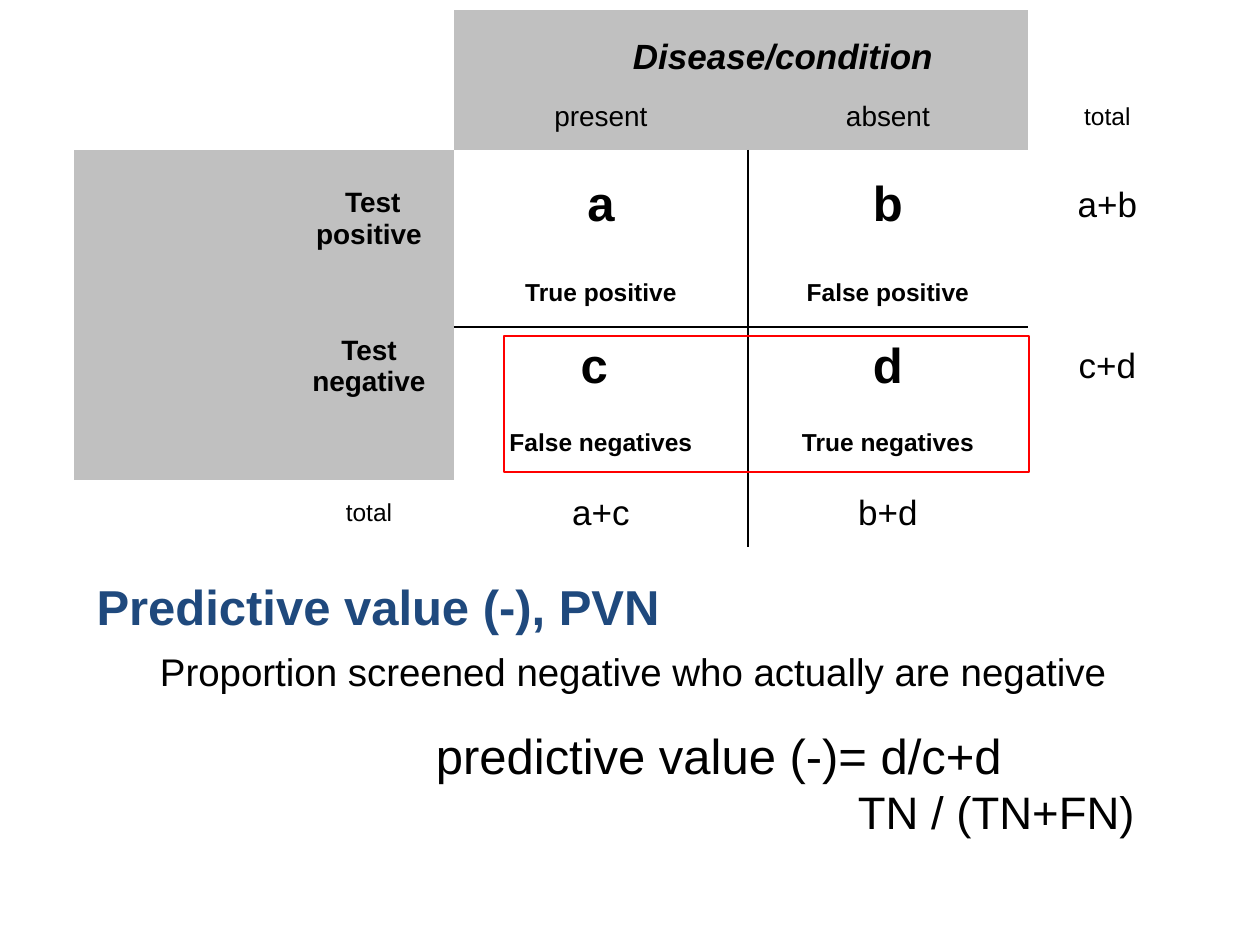
from lxml import etree
from pptx import Presentation
from pptx.dml.color import RGBColor
from pptx.enum.shapes import MSO_SHAPE as Shape
from pptx.enum.text import MSO_ANCHOR as Anchor, PP_ALIGN as Align
from pptx.oxml.ns import qn
from pptx.util import Emu, Pt

BLACK = RGBColor(0, 0, 0)
GREY = RGBColor(0xC0, 0xC0, 0xC0)
BLUE = RGBColor(0x1F, 0x49, 0x7D)
RED = RGBColor(0xFF, 0, 0)
FONT = "Arial"
NO_STYLE = "{2D5ABB26-0587-4C30-8999-92F81FD0307C}"

TEST_COLUMN, PRESENT, ABSENT, TOTAL_COLUMN = 1, 2, 3, 4
HEADER_ROWS = (0, 1)
TEST_ROWS = (2, 3, 4, 5)

# Each row: (text, size, bold) for the columns from the test column on
CELLS = [
    [],
    [None, ("present", 16, False), ("absent", 16, False), ("total", 14, False)],
    [(" Test positive", 16, True), ("a", 28, True), ("b", 28, True), ("a+b", 20, False)],
    [None, ("True positive", 14, True), ("False positive", 14, True)],
    [("Test negative", 16, True), ("c ", 28, True), ("d", 28, True), ("c+d", 20, False)],
    [None, ("False negatives", 14, True), ("True negatives", 14, True)],
    [("total", 14, False), ("a+c", 20, False), ("b+d", 20, False)],
]


def px(count):
    return Emu(round(count * 914400 / 126))


def add_plain_table(slide, left, top, widths, heights):
    frame = slide.shapes.add_table(len(heights), len(widths), px(left), px(top),
                                   px(sum(widths)), px(sum(heights)))
    table = frame.table
    table.first_row = table.horz_banding = False
    table._tbl.tblPr.find(qn("a:tableStyleId")).text = NO_STYLE
    for column, width in zip(table.columns, widths):
        column.width = px(width)
    for row, height in zip(table.rows, heights):
        row.height = px(height)
    return table


def add_text(paragraph, text, size, color=BLACK, bold=False, italic=False):
    run = paragraph.add_run()
    run.text = text
    font = run.font
    font.name, font.size, font.bold, font.italic = FONT, Pt(size), bold, italic
    font.color.rgb = color


def set_borders(cell, drawn_sides):
    """Draw 1 pt lines on the given sides and clear the others."""
    properties = cell._tc.get_or_add_tcPr()
    for index, side in enumerate("LRTB"):
        line = etree.Element(qn("a:ln" + side), w=str(Pt(1)))
        if side in drawn_sides:
            fill = etree.SubElement(line, qn("a:solidFill"))
            etree.SubElement(fill, qn("a:srgbClr"), val=str(BLACK))
        else:
            etree.SubElement(line, qn("a:noFill"))
        properties.insert(index, line)


def add_screening_table(slide, left, top):
    table = add_plain_table(slide, left, top, [210, 170, 294, 280, 159],
                            [73, 67, 110, 67, 79, 74, 67])

    # Shaded header and test bands, cross lines between the four outcomes
    for row in range(len(CELLS)):
        for column in range(len(table.columns)):
            cell = table.cell(row, column)
            shaded = (row in HEADER_ROWS and column in (PRESENT, ABSENT)
                      or row in TEST_ROWS and column <= TEST_COLUMN)
            if shaded:
                cell.fill.solid()
                cell.fill.fore_color.rgb = GREY
            else:
                cell.fill.background()
            sides = ""
            if row not in HEADER_ROWS and column in (PRESENT, ABSENT):
                sides = {PRESENT: "R", ABSENT: "L"}[column] + {3: "B", 4: "T"}.get(row, "")
            set_borders(cell, sides)

    # Heading over both condition columns
    heading = table.cell(0, PRESENT)
    heading.merge(table.cell(0, ABSENT))
    heading.vertical_anchor = Anchor.BOTTOM
    heading.margin_left = px(179)
    add_text(heading.text_frame.paragraphs[0], "Disease/condition", 20, bold=True, italic=True)

    # Labels and counts
    for row, entries in enumerate(CELLS):
        for column, entry in enumerate(entries, TEST_COLUMN):
            if entry is None:
                continue
            text, size, bold = entry
            cell = table.cell(row, column)
            cell.vertical_anchor = Anchor.MIDDLE
            paragraph = cell.text_frame.paragraphs[0]
            paragraph.alignment = Align.CENTER
            add_text(paragraph, text, size, bold=bold)
    table.cell(2, TEST_COLUMN).margin_top = px(34)


def add_definition_table(slide, left, top):
    table = add_plain_table(slide, left, top, [1102], [76, 59, 195, 72, 72, 54])
    cells = [table.cell(row, 0) for row in range(len(table.rows))]
    for cell in cells:
        cell.fill.background()
        cell.vertical_anchor = Anchor.BOTTOM
        set_borders(cell, "")
    title, meaning, formula = cells[:3]

    add_text(title.text_frame.paragraphs[0], "Predictive value (-), PVN", 28, BLUE, bold=True)
    meaning.margin_left = px(76)
    add_text(meaning.text_frame.paragraphs[0],
             "Proportion screened negative who actually are negative", 22)

    # Formula in letters, then in words further right
    formula.margin_left = px(352)
    formula.margin_bottom = px(57)
    add_text(formula.text_frame.paragraphs[0], "predictive value (-)= d/c+d", 28)
    expansion = formula.text_frame.add_paragraph()
    expansion.space_before = px(3)
    expansion._p.get_or_add_pPr().set("marL", str(px(422)))
    add_text(expansion, "TN / (TN+FN)", 26)


def add_highlight(slide, left, top, width, height):
    shape = slide.shapes.add_shape(Shape.RECTANGLE, px(left), px(top), px(width), px(height))
    shape.shadow.inherit = False
    shape.fill.background()
    shape.line.color.rgb = RED
    shape.line.width = Pt(0.75)


def main():
    presentation = Presentation()
    presentation.slide_width, presentation.slide_height = px(1260), px(945)
    slide = presentation.slides.add_slide(presentation.slide_layouts[6])
    add_screening_table(slide, 74, 10)
    add_definition_table(slide, 84, 566)
    add_highlight(slide, 504, 336, 525, 136)
    presentation.save("out.pptx")


if __name__ == "__main__":
    main()
